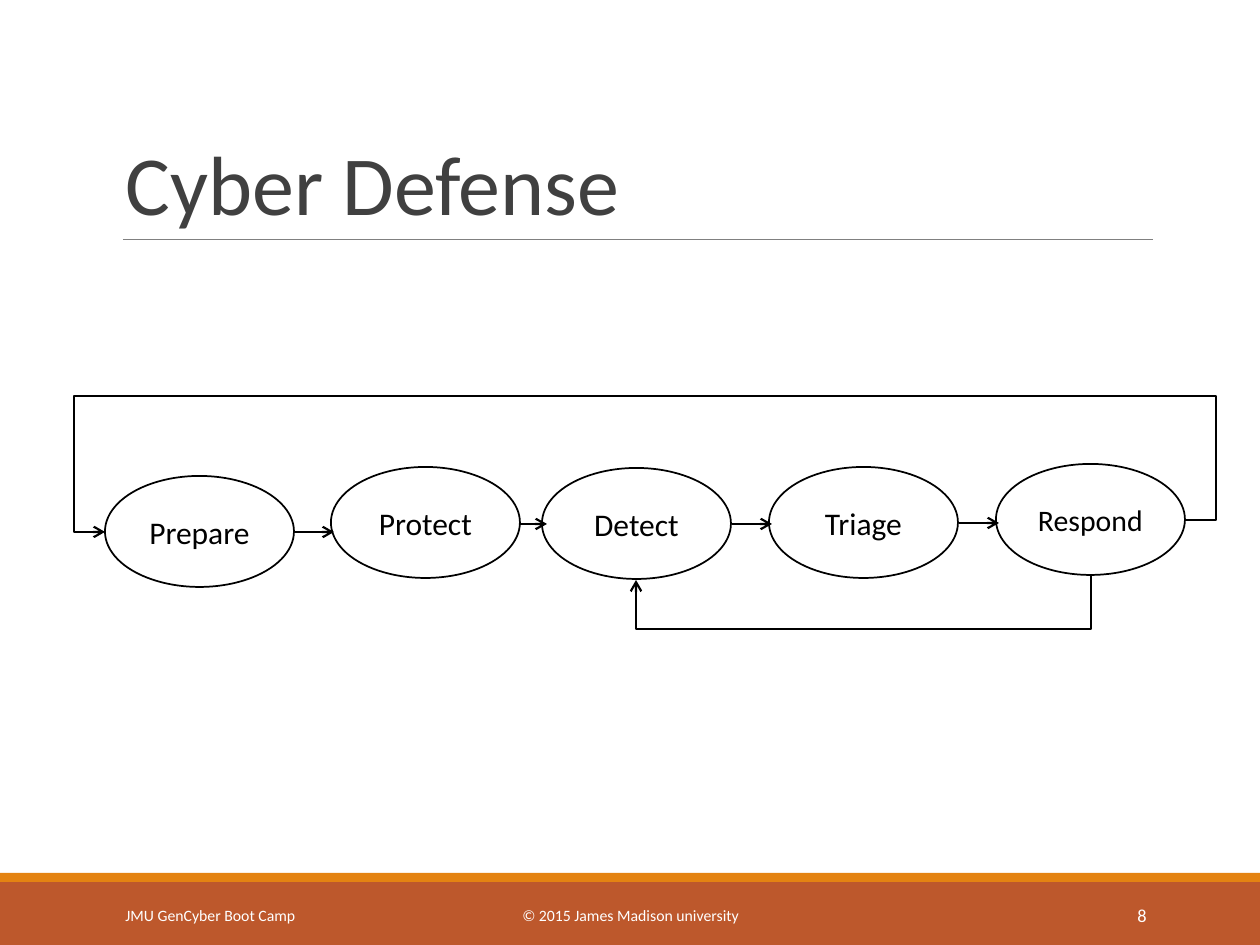
from lxml import etree
from pptx import Presentation
from pptx.dml.color import RGBColor
from pptx.enum.shapes import MSO_CONNECTOR, MSO_SHAPE
from pptx.enum.text import MSO_ANCHOR, MSO_AUTO_SIZE, PP_ALIGN
from pptx.oxml.ns import qn
from pptx.util import Emu, Pt

PX = 914400 // 126
FONT = "Calibri"
COLORS = {"band": "BD582C", "stripe": "E48312", "rule": "808080",
          "title": "404040", "ink": "000000", "footer": "FFFFFF"}

TITLE = "Cyber Defense"
BANDS = [("band", 882, 63), ("stripe", 873, 9)]  # color, top, height
FOOTERS = [  # text, left, width, alignment, size
    ("JMU GenCyber Boot Camp", 113, 256, PP_ALIGN.LEFT, 9),
    ("© 2015 James Madison university", 381, 499, PP_ALIGN.CENTER, 9),
    ("8", 1023, 136, PP_ALIGN.RIGHT, 10.5),
]
STAGE_SIZE = (189, 111)
STAGES = [  # name, left, top, text size
    ("Prepare", 105, 476, 18),
    ("Protect", 331, 467, 18),
    ("Detect", 542, 468, 18),
    ("Triage", 769, 467, 18),
    ("Respond", 996, 464, 17),
]
STEPS = [(294, 334, 532), (519, 547, 524), (732, 772, 524), (959, 999, 523)]  # from x, to x, y
DETECT_LOOP = {"start": (1091, 576), "end": (636, 580), "low": 629}
PREPARE_LOOP = {"start": (1185, 520), "end": (105, 532),
                "right": 1216, "high": 396, "left": 74}


def px(*values):
    return [Emu(round(value * PX)) for value in values]


def rgb(name):
    return RGBColor.from_string(COLORS[name])


def write(shape, text, size, color, align, anchor=MSO_ANCHOR.MIDDLE):
    frame = shape.text_frame
    frame.text = text
    frame.word_wrap = True
    frame.auto_size = MSO_AUTO_SIZE.NONE
    frame.vertical_anchor = anchor
    para = frame.paragraphs[0]
    para.alignment = align
    font = para.runs[0].font
    font.name, font.size = FONT, Pt(size)
    font.color.rgb = rgb(color)
    return para


def add_line(slide, start, end, color="ink", width=1.25, arrow=True,
             kind=MSO_CONNECTOR.STRAIGHT):
    line = slide.shapes.add_connector(kind, *px(*start, *end))
    line.line.color.rgb = rgb(color)
    line.line.width = Pt(width)
    if arrow:
        etree.SubElement(line.line._get_or_add_ln(), qn("a:tailEnd"), type="arrow")
    etree.SubElement(line._element.spPr, qn("a:effectLst"))
    return line


def set_bends(line, preset, bends):
    """Choose the elbow preset and place its bends, as fractions of its extent."""
    geometry = line._element.spPr.find(qn("a:prstGeom"))
    geometry.set("prst", preset)
    guides = geometry.find(qn("a:avLst"))
    for number, bend in enumerate(bends, 1):
        etree.SubElement(guides, qn("a:gd"), name=f"adj{number}",
                         fmla=f"val {round(bend * 100000)}")


def add_detect_loop(slide, start, end, low):
    """An elbow that leaves downward: a sideways one turned by 90 degrees."""
    (x1, y1), (x2, y2) = start, end
    run, drop = x1 - x2, y2 - y1
    center_x, center_y = (x1 + x2) / 2, (y1 + y2) / 2
    corner = (center_x - drop / 2, center_y - run / 2)
    line = add_line(slide, corner, (corner[0] + drop, corner[1] + run),
                    kind=MSO_CONNECTOR.ELBOW)
    line._element.spPr.find(qn("a:xfrm")).set("rot", str(90 * 60000))
    set_bends(line, "bentConnector3", [(low - y1) / drop])


def add_prepare_loop(slide, start, end, right, high, left):
    (x1, y1), (x2, y2) = start, end
    line = add_line(slide, start, end, kind=MSO_CONNECTOR.ELBOW)
    set_bends(line, "bentConnector5", [(x1 - right) / (x1 - x2),
                                       (high - y1) / (y2 - y1),
                                       (x1 - left) / (x1 - x2)])


def main():
    deck = Presentation()
    deck.slide_width, deck.slide_height = px(1260, 945)
    slide = deck.slides.add_slide(deck.slide_layouts[5])

    for color, top, height in BANDS:
        band = slide.shapes.add_shape(MSO_SHAPE.RECTANGLE, *px(0, top, 1260, height))
        band.shadow.inherit = False
        band.fill.solid()
        band.fill.fore_color.rgb = rgb(color)
        band.line.fill.background()
    add_line(slide, (123, 239), (1153, 239), "rule", 0.5, arrow=False)

    title = slide.shapes.title
    title.left, title.top, title.width, title.height = px(113, 39, 1040, 200)
    para = write(title, TITLE, 48, "title", PP_ALIGN.LEFT, MSO_ANCHOR.BOTTOM)
    para.line_spacing = 0.85

    for text, left, width, align, size in FOOTERS:
        box = slide.shapes.add_textbox(*px(left, 890, width, 50))
        write(box, text, size, "footer", align)

    for name, left, top, size in STAGES:
        stage = slide.shapes.add_shape(MSO_SHAPE.OVAL, *px(left, top, *STAGE_SIZE))
        stage.shadow.inherit = False
        stage.fill.background()
        stage.line.color.rgb = rgb("ink")
        stage.line.width = Pt(1)
        write(stage, name, size, "ink", PP_ALIGN.CENTER)

    for x1, x2, y in STEPS:
        add_line(slide, (x1, y), (x2, y))
    add_detect_loop(slide, **DETECT_LOOP)
    add_prepare_loop(slide, **PREPARE_LOOP)

    deck.save("out.pptx")


if __name__ == "__main__":
    main()
